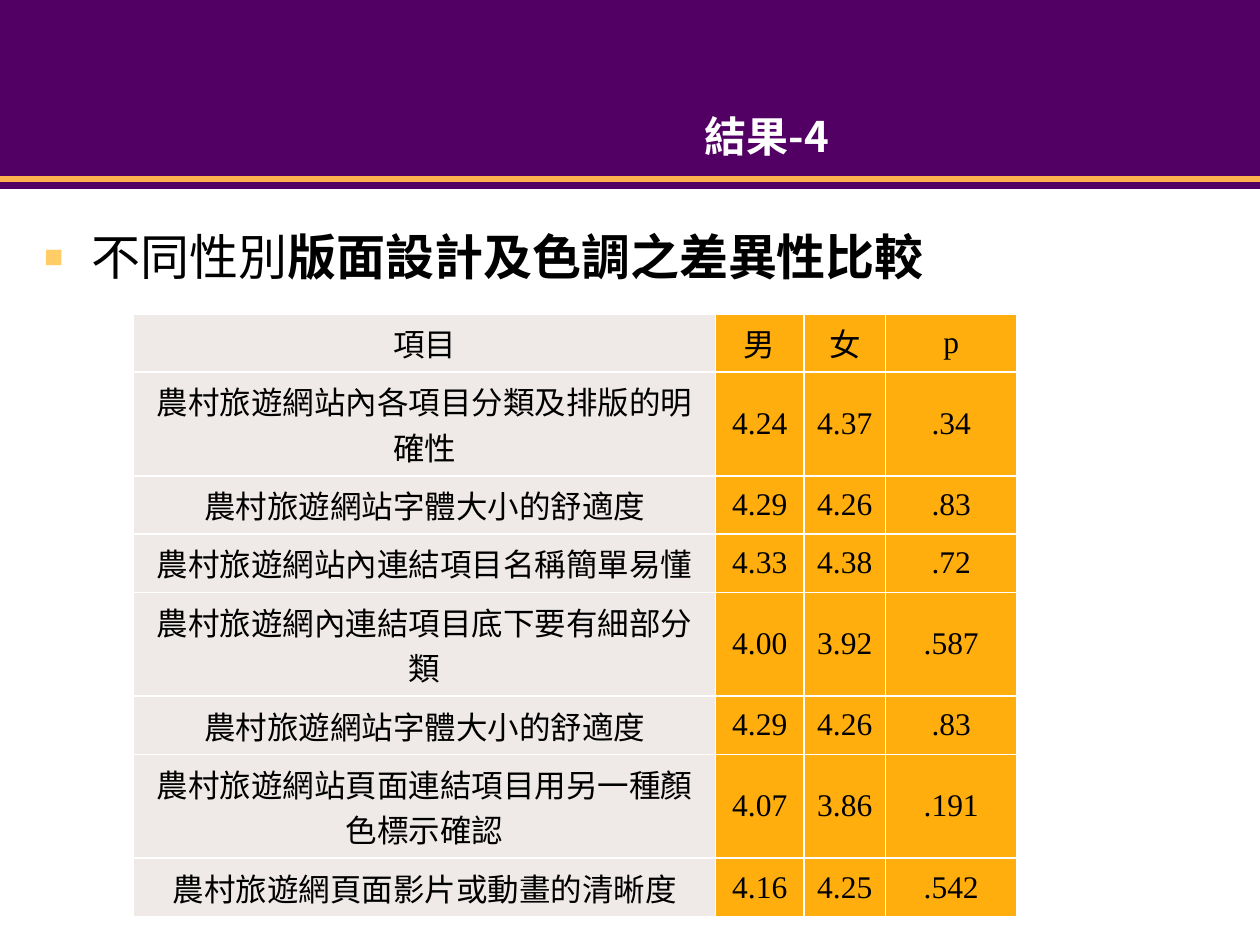
import pptx
import pptx.dml.color
import pptx.enum.shapes
import pptx.enum.text
import pptx.oxml
import pptx.oxml.ns
import pptx.util
from lxml import etree

Inches = pptx.util.Inches
Pt = pptx.util.Pt
RGBColor = pptx.dml.color.RGBColor
Align = pptx.enum.text.PP_ALIGN
Anchor = pptx.enum.text.MSO_ANCHOR
qn = pptx.oxml.ns.qn

PURPLE = RGBColor(0x52, 0x00, 0x63)
ORANGE = RGBColor(0xFF, 0xB2, 0x4D)
YELLOW = RGBColor(0xFF, 0xCC, 0x66)
AMBER = RGBColor(0xFF, 0xAE, 0x0D)
GREY = RGBColor(0xEF, 0xEA, 0xE8)
WHITE = RGBColor(0xFF, 0xFF, 0xFF)
BLACK = RGBColor(0x00, 0x00, 0x00)

ROWS = [
    ("項目", "男", "女", "p"),
    ("農村旅遊網站內各項目分類及排版的明確性", "4.24", "4.37", ".34"),
    ("農村旅遊網站字體大小的舒適度", "4.29", "4.26", ".83"),
    ("農村旅遊網站內連結項目名稱簡單易懂", "4.33", "4.38", ".72"),
    ("農村旅遊網內連結項目底下要有細部分類", "4.00", "3.92", ".587"),
    ("農村旅遊網站字體大小的舒適度", "4.29", "4.26", ".83"),
    ("農村旅遊網站頁面連結項目用另一種顏色標示確認", "4.07", "3.86", ".191"),
    ("農村旅遊網頁面影片或動畫的清晰度", "4.16", "4.25", ".542"),
]
WIDTHS = [4.62, 0.7, 0.65, 1.04]
HEIGHTS = [0.46, 0.52, 0.4, 0.4, 0.52, 0.4, 0.52, 0.4]


def set_font(font, name, size, color, bold=None):
    font.name, font.size, font.bold = name, Pt(size), bold
    font.color.rgb = color


def place(shape, left, top, width, height):
    shape.left, shape.top = Inches(left), Inches(top)
    shape.width, shape.height = Inches(width), Inches(height)


def add_band(slide, top, height):
    band = slide.shapes.add_shape(
        pptx.enum.shapes.MSO_SHAPE.RECTANGLE,
        0, Inches(top), Inches(10), Inches(height))
    band.shadow.inherit = False
    band.fill.solid()
    band.fill.fore_color.rgb = PURPLE
    band.line.fill.background()


def add_rule(slide, top):
    rule = slide.shapes.add_connector(
        pptx.enum.shapes.MSO_CONNECTOR.STRAIGHT,
        0, Inches(top), Inches(10), Inches(top))
    rule.line.color.rgb = ORANGE
    rule.line.width = Pt(3)
    etree.SubElement(rule.element.spPr, qn("a:effectLst"))


def fill_title(slide, text):
    title = slide.shapes.title
    place(title, 2.42, 0.83, 7.33, 0.67)
    frame = title.text_frame
    frame.text = text
    frame.auto_size = pptx.enum.text.MSO_AUTO_SIZE.NONE
    frame.vertical_anchor = Anchor.TOP
    para = frame.paragraphs[0]
    para.alignment = Align.CENTER
    set_font(para.font, "Noto Sans CJK SC", 24, WHITE, True)
    # The title has to lie in front of the purple bands.
    slide.shapes.element.append(title.element)


def add_bullet(para):
    props = para._p.get_or_add_pPr()
    props.set("marL", str(Inches(0.38)))
    props.set("indent", str(-Inches(0.38)))
    color = etree.SubElement(props, qn("a:buClr"))
    etree.SubElement(color, qn("a:srgbClr"), val=str(YELLOW))
    etree.SubElement(props, qn("a:buSzPct"), val="65000")
    etree.SubElement(props, qn("a:buChar"), char="■")


def fill_body(slide, plain, strong):
    body = slide.placeholders[1]
    place(body, 0.25, 1.75, 9.5, 0.74)
    frame = body.text_frame
    frame.auto_size = pptx.enum.text.MSO_AUTO_SIZE.NONE
    para = frame.paragraphs[0]
    add_bullet(para)
    set_font(para.font, "Roboto", 28, BLACK)
    para.add_run().text = plain
    run = para.add_run()
    run.text = strong
    run.font.bold = True
    slide.shapes.element.append(body.element)


def add_borders(cell):
    props = cell._tc.get_or_add_tcPr()
    for side in ("lnL", "lnR", "lnT", "lnB"):
        line = etree.SubElement(props, qn("a:" + side), w=str(Pt(1)))
        fill = etree.SubElement(line, qn("a:solidFill"))
        etree.SubElement(fill, qn("a:srgbClr"), val=str(WHITE))


def fill_cell(cell, text, name, color):
    add_borders(cell)
    cell.fill.solid()
    cell.fill.fore_color.rgb = color
    cell.vertical_anchor = Anchor.MIDDLE
    cell.text = text
    para = cell.text_frame.paragraphs[0]
    para.alignment = Align.CENTER
    set_font(para.font, name, 18, BLACK)


def add_scores(slide):
    table = slide.shapes.add_table(
        len(ROWS), len(WIDTHS), Inches(1.06), Inches(2.49),
        Inches(sum(WIDTHS)), Inches(sum(HEIGHTS))).table
    table.first_row = table.horz_banding = False
    for col, width in zip(table.columns, WIDTHS):
        col.width = Inches(width)
    for row, height, texts in zip(table.rows, HEIGHTS, ROWS):
        row.height = Inches(height)
        for i, (cell, text) in enumerate(zip(row.cells, texts)):
            if i == 0:
                fill_cell(cell, text, "Roboto", GREY)
            else:
                fill_cell(cell, text, "Times New Roman", AMBER)


def main():
    deck = pptx.Presentation()
    deck.slide_width, deck.slide_height = Inches(10), Inches(7.5)
    slide = deck.slides.add_slide(deck.slide_layouts[1])
    add_band(slide, 0, 1.42)
    add_band(slide, 1.42, 0.08)
    add_rule(slide, 1.42)
    fill_title(slide, "結果-4")
    fill_body(slide, "不同性別", "版面設計及色調之差異性比較")
    add_scores(slide)
    deck.save("out.pptx")


if __name__ == "__main__":
    main()
